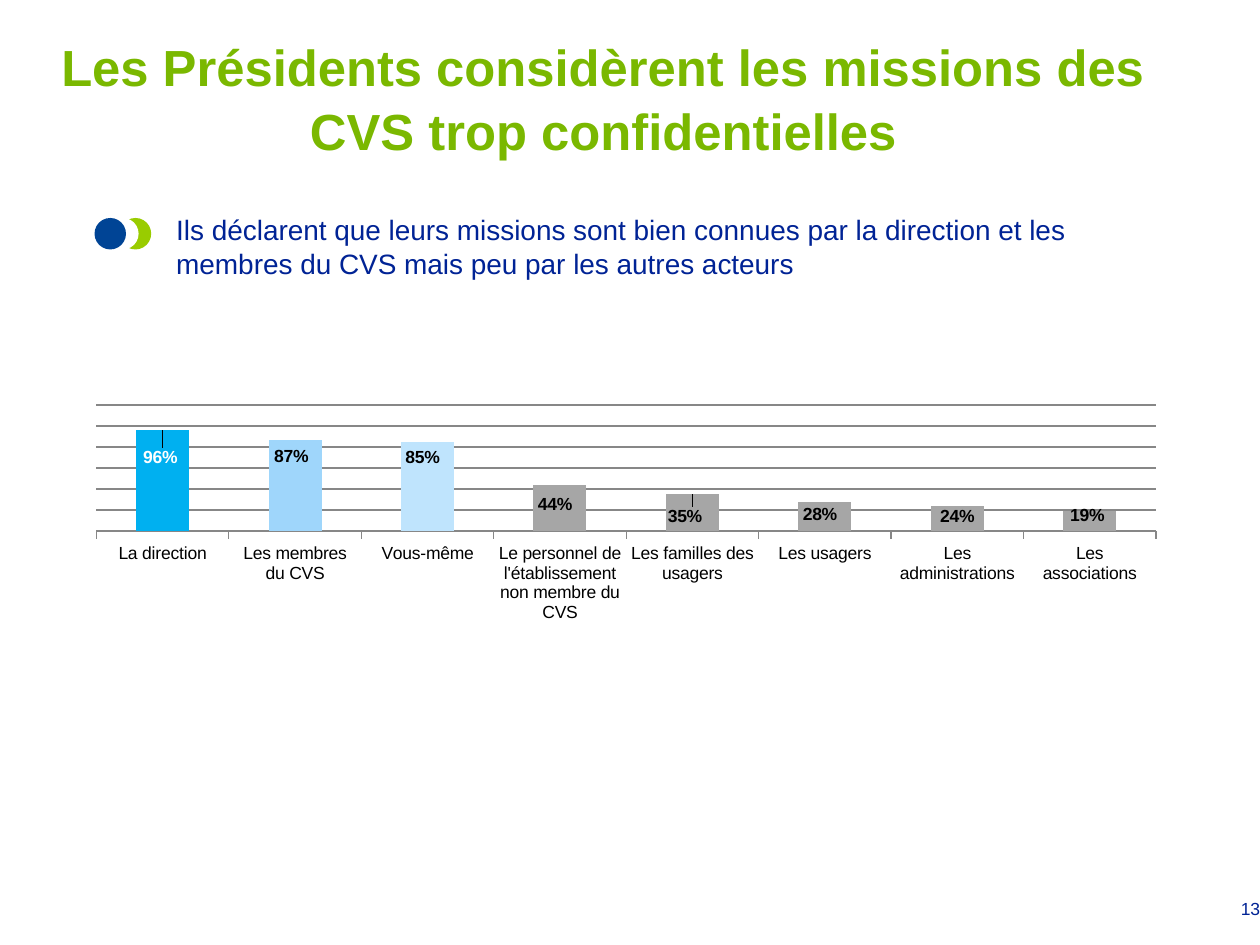
from lxml.etree import SubElement
from pptx import Presentation
from pptx.chart.data import CategoryChartData
from pptx.dml.color import RGBColor
from pptx.enum.chart import XL_CHART_TYPE as ChartType, XL_LABEL_POSITION as LabelPosition
from pptx.enum.chart import XL_TICK_MARK as TickMark
from pptx.enum.shapes import MSO_SHAPE as Shape
from pptx.enum.text import MSO_ANCHOR as Anchor, PP_ALIGN as Align
from pptx.oxml.ns import qn
from pptx.util import Inches, Pt

WIDTH, HEIGHT = 10, 7.5
FONT = "Arial"
NAVY, GREEN, BLACK, WHITE = "002395", "7AB800", "000000", "FFFFFF"
GRID_GREY, BAR_GREY = "878787", "A6A6A6"

# category, share, bar colour, label colour, label nudge in inches
RECOGNITION = [
    ("La direction", 0.96, "00B0F0", WHITE, (-0.02, 0.33)),
    ("Les membres du CVS", 0.87, "9FD6FB", BLACK, (-0.03, 0.25)),
    ("Vous-même", 0.85, "BFE4FD", BLACK, (-0.04, 0.24)),
    ("Le personnel de l'établissement non membre du CVS", 0.44, BAR_GREY, BLACK, (-0.04, 0.27)),
    ("Les familles des usagers", 0.35, BAR_GREY, BLACK, (-0.06, 0.29)),
    ("Les usagers", 0.28, BAR_GREY, BLACK, (-0.04, 0.22)),
    ("Les administrations", 0.24, BAR_GREY, BLACK, (0, 0.2)),
    ("Les associations", 0.19, BAR_GREY, BLACK, (-0.02, 0.15)),
]


def rgb(color):
    return RGBColor.from_string(color)


def set_font(font, size, color, bold=False):
    font.name, font.size, font.bold = FONT, Pt(size), bold
    font.color.rgb = rgb(color)


def add_text(slide, box, text, size, color, bold=False, align=Align.LEFT,
             anchor=Anchor.TOP, spacing=1.0):
    frame = slide.shapes.add_textbox(*map(Inches, box)).text_frame
    frame.word_wrap = True
    frame.vertical_anchor = anchor
    paragraph = frame.paragraphs[0]
    paragraph.text = text
    paragraph.alignment = align
    paragraph.line_spacing = spacing
    set_font(paragraph.font, size, color, bold)


def add_marker(slide, box):
    left, top, width, height = box
    step = (width - height) / 2
    marker = slide.shapes.add_group_shape()
    for place, color in ((2, "99CC00"), (1, WHITE), (0, "004495")):
        disc = marker.shapes.add_shape(
            Shape.OVAL, *map(Inches, (left + place * step, top, height, height)))
        disc.shadow.inherit = False
        disc.fill.solid()
        disc.fill.fore_color.rgb = rgb(color)
        disc.line.fill.background()


def add_layout(parent, index, **settings):
    for layout in parent.findall(qn("c:layout")):
        parent.remove(layout)
    layout = SubElement(parent, qn("c:layout"))
    parent.insert(index, layout)
    manual = SubElement(layout, qn("c:manualLayout"))
    for tag, value in settings.items():
        SubElement(manual, qn(f"c:{tag}")).set("val", str(value))


def add_recognition_chart(slide, box):
    names, shares, bar_colors, label_colors, nudges = zip(*RECOGNITION)
    data = CategoryChartData(number_format="0%")
    data.categories = names
    data.add_series("Series 1", shares)
    chart = slide.shapes.add_chart(
        ChartType.COLUMN_CLUSTERED, *map(Inches, box), data).chart
    chart.has_legend = chart.has_title = False
    set_font(chart.font, 10, BLACK)

    category_axis, value_axis = chart.category_axis, chart.value_axis
    category_axis.major_tick_mark = TickMark.OUTSIDE
    category_axis.format.line.color.rgb = rgb(GRID_GREY)
    value_axis.visible = False
    value_axis.minimum_scale, value_axis.maximum_scale = 0, 1.2
    value_axis.major_unit = 0.2
    value_axis.has_major_gridlines = True
    value_axis.major_gridlines.format.line.color.rgb = rgb(GRID_GREY)

    plot = chart.plots[0]
    plot.gap_width = 150
    plot.vary_by_categories = False
    series = plot.series[0]
    series.data_labels.show_value = True
    series.data_labels.number_format = "0%"
    series.data_labels.number_format_is_linked = False
    for index, (bar_color, label_color) in enumerate(zip(bar_colors, label_colors)):
        point = series.points[index]
        point.format.fill.solid()
        point.format.fill.fore_color.rgb = rgb(bar_color)
        set_font(point.data_label.font, 10, label_color, bold=True)
        point.data_label.position = LabelPosition.OUTSIDE_END

    for label, (right, down) in zip(chart.element.iter(qn("c:dLbl")), nudges):
        add_layout(label, 1, x=right / box[2], y=down / box[3])
    plot_area = next(chart.element.iter(qn("c:plotArea")))
    add_layout(plot_area, 0, layoutTarget="inner", xMode="edge", yMode="edge",
               x=0.02, y=0.12, w=0.96, h=0.47)


def add_finding_slide(deck):
    slide = deck.slides.add_slide(deck.slide_layouts[6])
    add_text(slide, (0.33, 0.06, 8.92, 1.41),
             "Les Présidents considèrent les missions des CVS trop confidentielles",
             29, GREEN, bold=True, align=Align.CENTER, anchor=Anchor.MIDDLE, spacing=1.05)
    add_marker(slide, (0.75, 1.73, 0.45, 0.25))
    add_text(slide, (1.3, 1.64, 7.48, 5.3),
             "Ils déclarent que leurs missions sont bien connues par la direction "
             "et les membres du CVS mais peu par les autres acteurs", 16, NAVY)
    add_recognition_chart(slide, (0.59, 2.96, 8.76, 2.13))
    add_text(slide, (0.96 * WIDTH, 7.08, 0.5, 0.5), "13", 10, NAVY, align=Align.RIGHT)


def main():
    deck = Presentation()
    deck.slide_width, deck.slide_height = Inches(WIDTH), Inches(HEIGHT)
    add_finding_slide(deck)
    deck.save("out.pptx")


if __name__ == "__main__":
    main()
